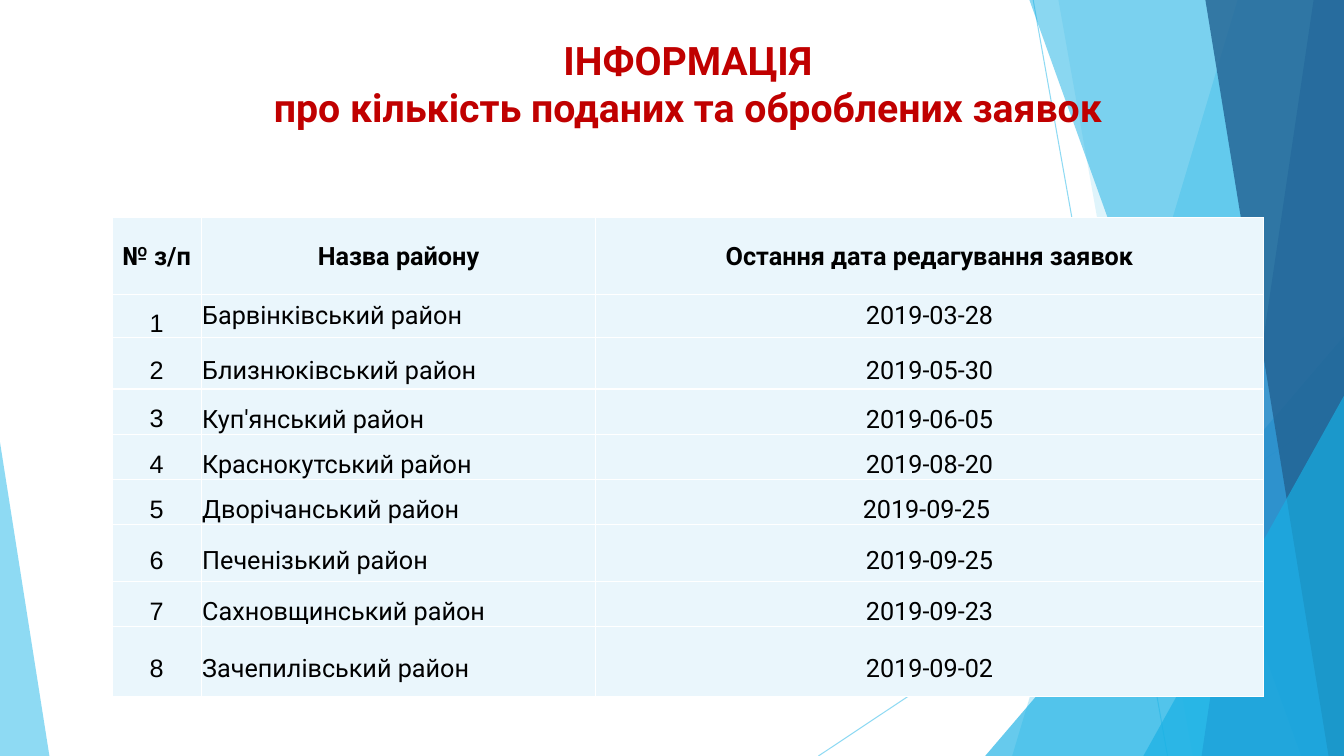
from dataclasses import dataclass

from lxml.etree import SubElement
from pptx import Presentation
from pptx.dml.color import RGBColor
from pptx.enum.shapes import MSO_CONNECTOR, MSO_SHAPE
from pptx.enum.text import MSO_ANCHOR, MSO_AUTO_SIZE, PP_ALIGN
from pptx.oxml import parse_xml
from pptx.oxml.ns import nsdecls, qn
from pptx.util import Pt

W, H = 960, 540
FONT = "Roboto"
SKY, CYAN = "5FCBEF", "17B0E4"


@dataclass(frozen=True)
class Ray:
    x1: float
    y1: float
    x2: float
    y2: float


@dataclass(frozen=True)
class Band:
    top_x: float
    bottom_x: float
    color: str
    alpha: int


@dataclass(frozen=True)
class Wedge:
    x: float
    y: float
    w: float
    apex: float
    color: str
    alpha: int


@dataclass(frozen=True)
class District:
    name: str
    date: str
    height: float
    spacing: float = 1.5


DECOR = [
    Ray(738, 0, 834, H),
    Ray(W, 290.3, 584.6, H),
    Band(884, 723, SKY, 36),
    Band(756, 852, SKY, 20),
    Wedge(703.7, 240, 256.3, 1, CYAN, 66),
    Band(735.3, 929.3, CYAN, 50),
    Band(938.3, 858.3, "2E83C3", 70),
    Band(861, 949, "226292", 80),
    Wedge(816.7, 282.7, 143.3, 1, CYAN, 66),
    Wedge(0, 316, 35.3, 0, SKY, 70),
]

HEADERS = ["№ з/п", "Назва району", "Остання дата редагування заявок"]
COLUMN_WIDTHS = [63.8, 281.8, 476.8]
HEADER_HEIGHT = 54.7
DISTRICTS = [
    District("Барвінківський район", "2019-03-28", 28.8, 1),
    District("Близнюківський район", "2019-05-30", 36.7),
    District("Куп'янський район", "2019-06-05", 27.4),
    District("Краснокутський район", "2019-08-20", 27.4),
    District("Дворічанський район", "2019-09-25 ", 27.4),
    District("Печенізький район", "2019-09-25", 40.3),
    District("Сахновщинський район", "2019-09-23", 27.4),
    District("Зачепилівський район", "2019-09-02", 49.7),
]


def rgb(color: str) -> RGBColor:
    return RGBColor.from_string(color)


def set_alpha(props, alpha: int) -> None:
    clr = next(props.iter(qn("a:srgbClr")))
    SubElement(clr, qn("a:alpha"), val=str(alpha * 1000))


def draw_ray(shapes, ray: Ray) -> None:
    line = shapes.add_connector(
        MSO_CONNECTOR.STRAIGHT, Pt(ray.x1), Pt(ray.y1), Pt(ray.x2), Pt(ray.y2)
    )
    line.line.color.rgb = rgb(SKY)
    line.line.width = Pt(0.75)
    props = line.element.spPr
    set_alpha(props, 70)
    SubElement(props, qn("a:effectLst"))


def paint(sp, color: str, alpha: int) -> None:
    sp.shadow.inherit = False
    sp.line.fill.background()
    sp.fill.solid()
    sp.fill.fore_color.rgb = rgb(color)
    set_alpha(sp.element.spPr, alpha)


def draw_band(shapes, band: Band) -> None:
    builder = shapes.build_freeform(Pt(band.top_x), 0)
    corners = [(W, 0), (W, H), (band.bottom_x, H)]
    builder.add_line_segments([(Pt(x), Pt(y)) for x, y in corners])
    paint(builder.convert_to_shape(), band.color, band.alpha)


def draw_wedge(shapes, wedge: Wedge) -> None:
    sp = shapes.add_shape(
        MSO_SHAPE.ISOSCELES_TRIANGLE,
        Pt(wedge.x), Pt(wedge.y), Pt(wedge.w), Pt(H - wedge.y),
    )
    sp.adjustments[0] = wedge.apex
    paint(sp, wedge.color, wedge.alpha)


def format_paragraph(p, size: float, color: str, bold: bool, font: str = FONT,
                     align: PP_ALIGN = PP_ALIGN.CENTER, spacing: float = 1) -> None:
    p.alignment = align
    p.line_spacing = spacing
    p.font.size = Pt(size)
    p.font.name = font
    p.font.bold = bold
    p.font.color.rgb = rgb(color)


def fill_title(sp) -> None:
    sp.left, sp.top, sp.width, sp.height = Pt(44.6), Pt(22.3), Pt(893.5), Pt(103.7)
    tf = sp.text_frame
    tf.word_wrap = True
    tf.auto_size = MSO_AUTO_SIZE.NONE
    tf.vertical_anchor = MSO_ANCHOR.TOP
    p = tf.paragraphs[0]
    p.text = "ІНФОРМАЦІЯ\vпро кількість поданих та оброблених заявок"
    format_paragraph(p, 28, "C00000", True)


def fill_cell(cell, text: str, bold: bool = False, **style) -> None:
    cell.margin_left = cell.margin_right = cell.margin_top = Pt(0.7)
    cell.margin_bottom = 0
    cell.vertical_anchor = MSO_ANCHOR.MIDDLE
    props = cell._tc.get_or_add_tcPr()
    for side in "LRTB":
        props.append(parse_xml(
            f'<a:ln{side} {nsdecls("a")} w="{Pt(1)}"><a:solidFill>'
            f'<a:srgbClr val="FFFFFF"/></a:solidFill></a:ln{side}>'
        ))
    cell.fill.solid()
    cell.fill.fore_color.rgb = rgb("EAF6FC")
    p = cell.text_frame.paragraphs[0]
    p.text = text
    format_paragraph(p, 18, "000000", bold, **style)


def draw_table(shapes) -> None:
    heights = [HEADER_HEIGHT, *(d.height for d in DISTRICTS)]
    table = shapes.add_table(
        len(heights), len(HEADERS),
        Pt(80), Pt(155.5), Pt(sum(COLUMN_WIDTHS)), Pt(sum(heights)),
    ).table
    table.first_row = table.horz_banding = False
    for column, width in zip(table.columns, COLUMN_WIDTHS):
        column.width = Pt(width)
    for row, height in zip(table.rows, heights):
        row.height = Pt(height)
    for i, header in enumerate(HEADERS):
        fill_cell(table.cell(0, i), header, bold=True)
    for n, d in enumerate(DISTRICTS, 1):
        fill_cell(table.cell(n, 0), str(n), font="Arial", spacing=1.5)
        fill_cell(table.cell(n, 1), d.name, align=PP_ALIGN.LEFT, spacing=d.spacing)
        fill_cell(table.cell(n, 2), d.date, spacing=d.spacing)


def main() -> None:
    prs = Presentation()
    prs.slide_width, prs.slide_height = Pt(W), Pt(H)
    s = prs.slides.add_slide(prs.slide_layouts[5])
    painters = {Ray: draw_ray, Band: draw_band, Wedge: draw_wedge}
    for item in DECOR:
        painters[type(item)](s.shapes, item)
    title = s.shapes.title
    title.element.getparent().append(title.element)
    fill_title(title)
    draw_table(s.shapes)
    prs.save("out.pptx")


if __name__ == "__main__":
    main()
